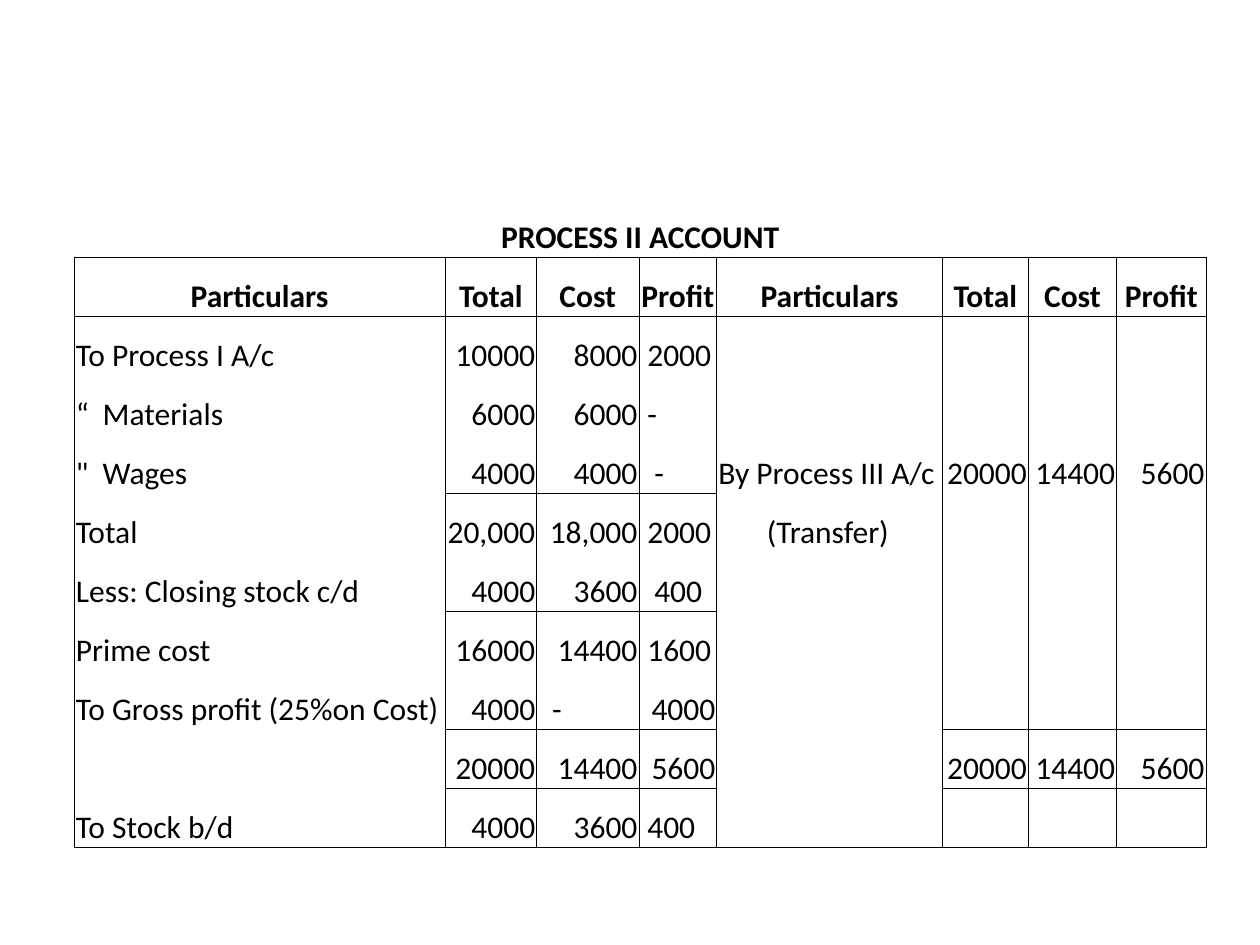
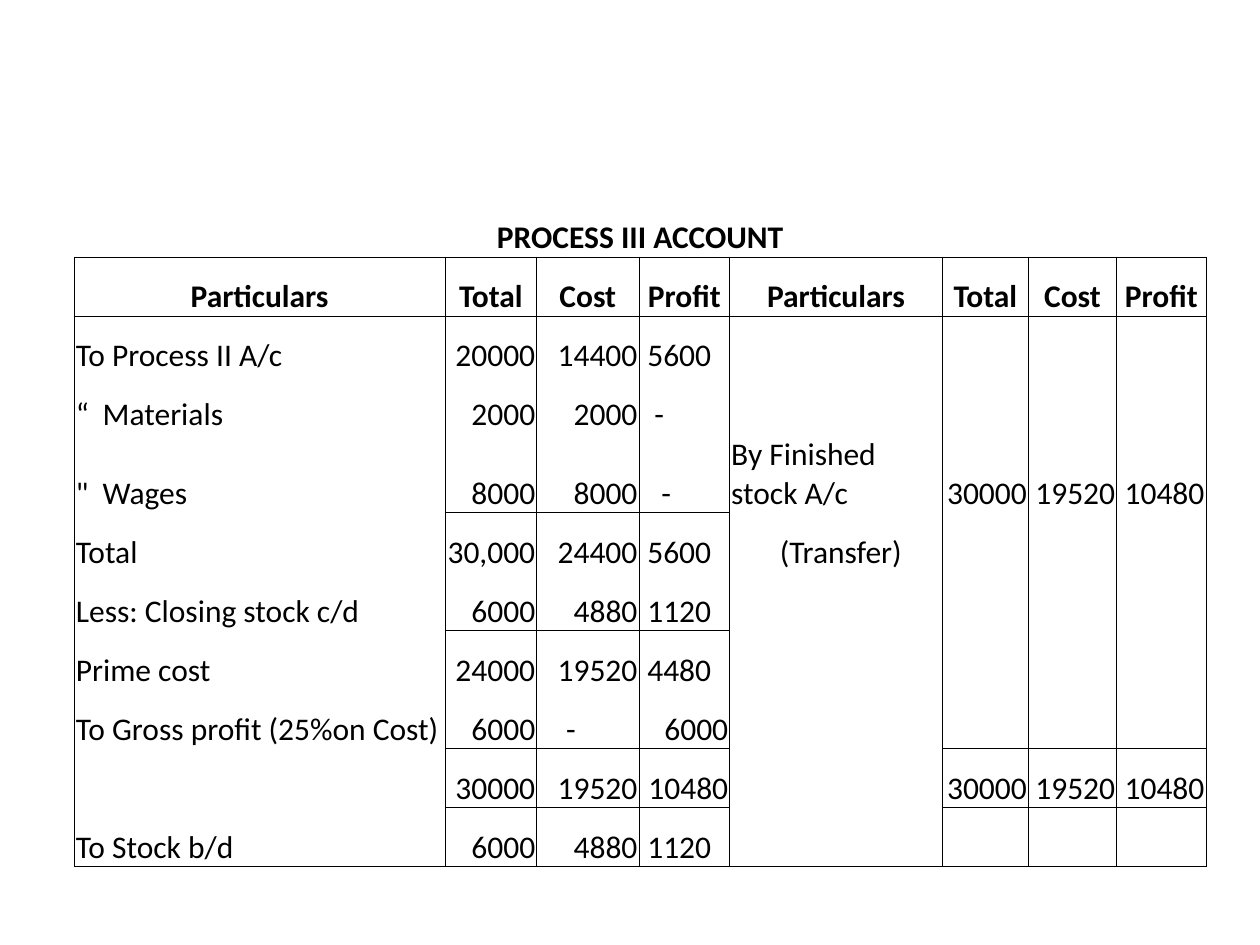
from dataclasses import dataclass

from lxml.etree import SubElement
from pptx import Presentation
from pptx.dml.color import RGBColor
from pptx.enum.text import MSO_ANCHOR, PP_ALIGN
from pptx.oxml.ns import qn
from pptx.slide import Slide
from pptx.table import _Cell
from pptx.util import Cm, Pt

INK = RGBColor(0x00, 0x00, 0x00)
FONT = "Calibri"
TEXT_SIZE = Pt(18)
RULE_WIDTH = Pt(0.5)
PLAIN_STYLE = "{2D5ABB26-0587-4C30-8999-92F81FD0307C}"

# Ledger geometry
LEFT, TOP = Cm(1.5), Cm(3.94)
TITLE_HEIGHT, ROW_HEIGHT = Cm(1.24), Cm(1.19)
CELL_MARGIN = Cm(0.03)
INDENT_STEP = Cm(0.14)
DITTO_STOP = Cm(0.54)

# Rows below which each kind of column is ruled
TITLE_ROW, HEADER_ROW, FIRST_ENTRY, TRANSFER_ROW, SUM_ROW, LAST_ROW = 0, 1, 2, 4, 9, 10
LABEL_RULES = {TITLE_ROW, HEADER_ROW, LAST_ROW}
CREDIT_RULES = LABEL_RULES | {8, SUM_ROW}
DEBIT_RULES = CREDIT_RULES | {4, 6}
COLUMN_RULES = [LABEL_RULES, *[DEBIT_RULES] * 3, LABEL_RULES, *[CREDIT_RULES] * 3]
HEADINGS = ("Particulars", "Total", "Cost", "Profit") * 2


@dataclass(frozen=True)
class Entry:
    text: str
    align: PP_ALIGN = PP_ALIGN.LEFT
    indent: int = 0
    bold: bool = False


@dataclass(frozen=True)
class Account:
    title: str
    source: str
    receiver: str
    profit_width: float
    receiver_width: float
    totals: list[Entry]
    costs: list[Entry]
    profits: list[Entry]
    transfer: list[Entry]


def heading(text: str) -> Entry:
    return Entry(text, PP_ALIGN.CENTER, bold=True)


def amounts(figures: str) -> list[Entry]:
    return [Entry(figure, PP_ALIGN.RIGHT) for figure in figures.split()]


def indented(figures: str, *steps: int) -> list[Entry]:
    return [Entry(figure, indent=step) for figure, step in zip(figures.split(), steps)]


ACCOUNTS = [
    Account(
        title="PROCESS II ACCOUNT",
        source="To Process I A/c",
        receiver="By Process III A/c",
        profit_width=1.57,
        receiver_width=4.55,
        totals=amounts("10000 6000 4000 20,000 4000 16000 4000 20000 4000"),
        costs=amounts("8000 6000 4000 18,000 3600 14400")
        + indented("-", 2) + amounts("14400 3600"),
        profits=indented("2000 - - 2000 400 1600", 1, 1, 2, 1, 2, 1)
        + amounts("4000 5600") + indented("400", 1),
        transfer=amounts("20000 14400 5600"),
    ),
    Account(
        title="PROCESS III ACCOUNT",
        source="To Process II A/c",
        receiver="By Finished stock A/c",
        profit_width=1.83,
        receiver_width=4.29,
        totals=amounts("20000 2000 8000 30,000 6000 24000 6000 30000 6000"),
        costs=amounts("14400 2000 8000 24400 4880 19520")
        + indented("-", 4) + amounts("19520 4880"),
        profits=indented("5600 - - 5600 1120 4480", 1, 2, 3, 1, 1, 1)
        + amounts("6000 10480") + indented("1120", 1),
        transfer=amounts("30000 19520 10480"),
    ),
]


def ledger_entries(account: Account) -> dict[tuple[int, int], Entry]:
    """Place every entry of the account by row and column."""
    entries = {(TITLE_ROW, 0): heading(account.title)}
    entries |= {(HEADER_ROW, col): heading(text) for col, text in enumerate(HEADINGS)}

    # Debit side
    labels = [Entry(text) for text in (
        account.source, "“\tMaterials", "\"\tWages", "Total",
        "Less: Closing stock c/d", "Prime cost",
        "To Gross profit (25%on Cost)", "", "To Stock b/d")]
    for col, column in enumerate((labels, account.totals, account.costs, account.profits)):
        for row, entry in enumerate(column, FIRST_ENTRY):
            entries[row, col] = entry

    # Credit side
    entries[TRANSFER_ROW, 4] = Entry(account.receiver)
    entries[TRANSFER_ROW + 1, 4] = Entry("(Transfer)", indent=7)
    for col, entry in enumerate(account.transfer, 5):
        entries[TRANSFER_ROW, col] = entries[SUM_ROW, col] = entry
    return entries


def write_entry(cell: _Cell, entry: Entry) -> None:
    paragraph = cell.text_frame.paragraphs[0]
    paragraph.alignment = entry.align
    properties = paragraph._p.get_or_add_pPr()
    if entry.indent:
        properties.set("marL", str(INDENT_STEP * entry.indent))
    if "\t" in entry.text:
        stops = SubElement(properties, qn("a:tabLst"))
        SubElement(stops, qn("a:tab"), pos=str(DITTO_STOP), algn="l")
    run = paragraph.add_run()
    run.text = entry.text
    run.font.name = FONT
    run.font.size = TEXT_SIZE
    run.font.bold = entry.bold
    run.font.color.rgb = INK


def rule_cell(cell: _Cell, row: int, col: int) -> None:
    """Draw the edges of a cell; only the title row has open sides."""
    sides = row > TITLE_ROW
    edges = {
        "a:lnL": sides,
        "a:lnR": sides,
        "a:lnT": row - 1 in COLUMN_RULES[col],
        "a:lnB": row in COLUMN_RULES[col],
    }
    properties = cell._tc.get_or_add_tcPr()
    for tag, ruled in edges.items():
        line = SubElement(properties, qn(tag), w=str(RULE_WIDTH))
        if ruled:
            fill = SubElement(line, qn("a:solidFill"))
            SubElement(fill, qn("a:srgbClr"), val=str(INK))
        else:
            SubElement(line, qn("a:noFill"))


def add_ledger(slide: Slide, account: Account) -> None:
    widths = [Cm(width) for width in (
        7.47, 1.85, 2.06, account.profit_width, account.receiver_width, 1.73, 1.78, 1.8)]
    heights = [TITLE_HEIGHT] + [ROW_HEIGHT] * LAST_ROW
    ledger = slide.shapes.add_table(
        len(heights), len(widths), LEFT, TOP, sum(widths), sum(heights)).table
    ledger.first_row = ledger.horz_banding = False
    ledger._tbl.tblPr.find(qn("a:tableStyleId")).text = PLAIN_STYLE
    for column, width in zip(ledger.columns, widths):
        column.width = width
    for ledger_row, height in zip(ledger.rows, heights):
        ledger_row.height = height
    ledger.cell(TITLE_ROW, 0).merge(ledger.cell(TITLE_ROW, len(widths) - 1))

    entries = ledger_entries(account)
    for row in range(len(heights)):
        for col in range(len(widths)):
            cell = ledger.cell(row, col)
            cell.margin_left = cell.margin_right = cell.margin_top = CELL_MARGIN
            cell.margin_bottom = 0
            cell.vertical_anchor = MSO_ANCHOR.BOTTOM
            rule_cell(cell, row, col)
            cell.fill.background()
            entry = entries.get((row, col))
            if entry and entry.text:
                write_entry(cell, entry)


def main() -> None:
    deck = Presentation()
    deck.slide_width, deck.slide_height = Cm(25.4), Cm(19.05)
    for account in ACCOUNTS:
        add_ledger(deck.slides.add_slide(deck.slide_layouts[6]), account)
    deck.save("out.pptx")


if __name__ == "__main__":
    main()
